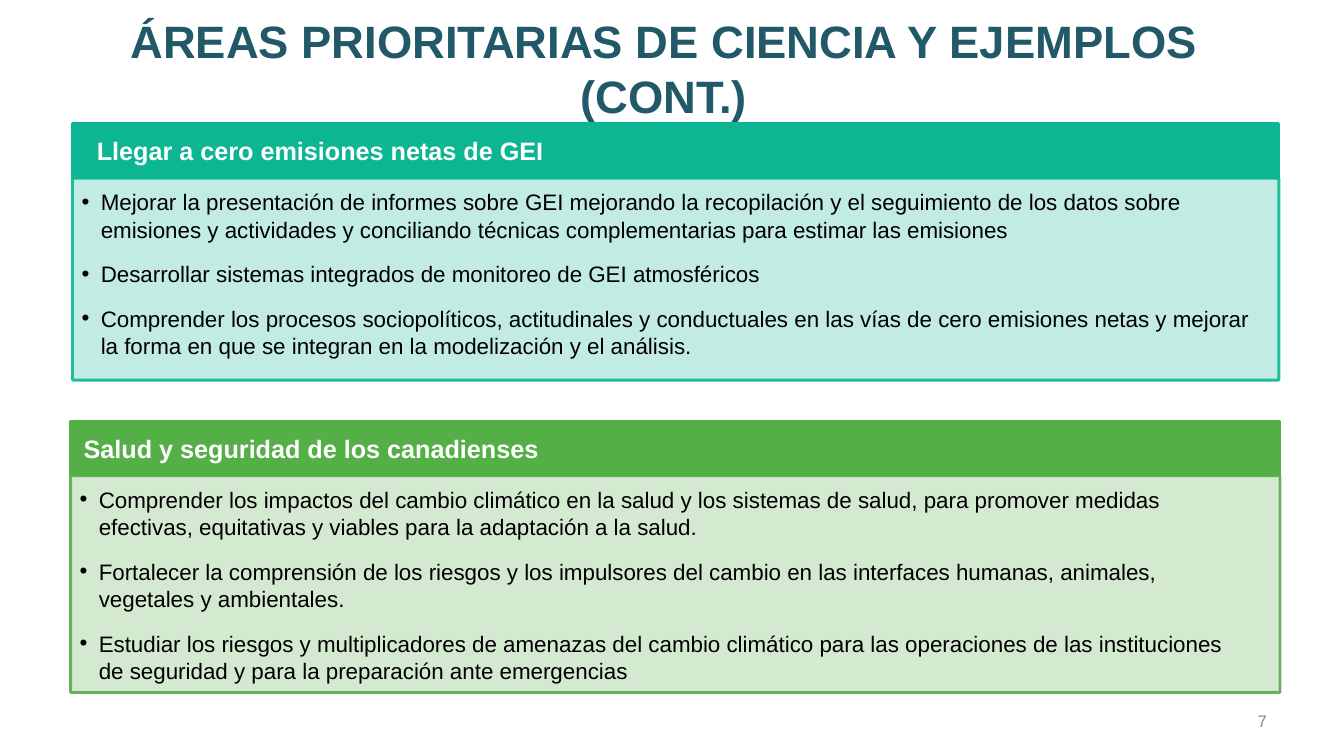
from lxml.etree import SubElement
from pptx import Presentation
from pptx.dml.color import RGBColor
from pptx.enum.shapes import MSO_SHAPE
from pptx.enum.text import MSO_ANCHOR, MSO_AUTO_SIZE, PP_ALIGN
from pptx.oxml.ns import qn
from pptx.util import Cm, Pt

HEADER_HEIGHT = 1.35
BODY_OFFSET = 1.37
INDENT = 0.48

NET_ZERO = [
    "Mejorar la presentación de informes sobre GEI mejorando la recopilación y el seguimiento "
    "de los datos sobre emisiones y actividades y conciliando técnicas complementarias para "
    "estimar las emisiones",
    "Desarrollar sistemas integrados de monitoreo de GEI atmosféricos",
    "Comprender los procesos sociopolíticos, actitudinales y conductuales en las vías de cero "
    "emisiones netas y mejorar la forma en que se integran en la modelización y el análisis.",
]
HEALTH = [
    "Comprender los impactos del cambio climático en la salud y los sistemas de salud, para "
    "promover medidas efectivas, equitativas y viables para la adaptación a la salud.",
    "Fortalecer la comprensión de los riesgos y los impulsores del cambio en las interfaces "
    "humanas, animales, vegetales y ambientales.",
    "Estudiar los riesgos y multiplicadores de amenazas del cambio climático para las "
    "operaciones de las instituciones de seguridad y para la preparación ante emergencias",
]


def rgb(code):
    return RGBColor.from_string(code)


def set_alpha(fill_format_parent, percent):
    """Add transparency to the first solid colour found below an XML element."""
    colour = fill_format_parent.find(qn("a:solidFill")).find(qn("a:srgbClr"))
    SubElement(colour, qn("a:alpha"), val=str(percent * 1000))


def format_text(paragraph, size, colour, bold=False, align=PP_ALIGN.LEFT):
    paragraph.alignment = align
    for run in paragraph.runs:
        run.font.name = "Arial"
        run.font.size = Pt(size)
        run.font.bold = bold
        run.font.color.rgb = rgb(colour)


def set_frame(frame, anchor, left=0.25, top=0.13, right=0.25, bottom=0.13):
    frame.word_wrap = True
    frame.auto_size = MSO_AUTO_SIZE.NONE
    frame.vertical_anchor = anchor
    frame.margin_left, frame.margin_top = Cm(left), Cm(top)
    frame.margin_right, frame.margin_bottom = Cm(right), Cm(bottom)


def add_bullet(paragraph):
    properties = paragraph._p.get_or_add_pPr()
    properties.set("marL", str(Cm(INDENT)))
    properties.set("indent", str(-Cm(INDENT)))
    SubElement(properties, qn("a:buFont"), typeface="Arial")
    SubElement(properties, qn("a:buChar"), char="•")


def add_block(slide, box, colour):
    block = slide.shapes.add_shape(MSO_SHAPE.RECTANGLE, *map(Cm, box))
    block.shadow.inherit = False
    block.fill.solid()
    block.fill.fore_color.rgb = rgb(colour)
    block.line.color.rgb = rgb(colour)
    block.line.width = Pt(2)
    return block


def add_title(slide, box, text):
    title = slide.shapes.title
    title.left, title.top, title.width, title.height = map(Cm, box)
    set_frame(title.text_frame, MSO_ANCHOR.MIDDLE)
    title.text_frame.text = text
    format_text(title.text_frame.paragraphs[0], 32.4, "215968", True, PP_ALIGN.CENTER)


def add_panel(slide, box, colour, heading, points, heading_inset, right_inset):
    left, top, width, height = box

    # Heading band
    band = add_block(slide, (left, top, width, HEADER_HEIGHT), colour)
    set_frame(band.text_frame, MSO_ANCHOR.MIDDLE, left=heading_inset)
    band.text_frame.text = heading
    format_text(band.text_frame.paragraphs[0], 18, "FFFFFF", True)

    # Tinted body with bullets
    body = add_block(slide, (left, top + BODY_OFFSET, width, height - BODY_OFFSET), colour)
    set_alpha(body._element.spPr, 25)
    set_alpha(body._element.spPr.find(qn("a:ln")), 90)
    set_frame(body.text_frame, MSO_ANCHOR.TOP, 0.23, 0.23, right_inset, 0)
    body.text_frame.text = "\n".join(points)
    for paragraph in body.text_frame.paragraphs:
        paragraph.line_spacing = 1.03
        paragraph.space_after = Pt(12)
        add_bullet(paragraph)
        format_text(paragraph, 16, "000000")


def add_page_number(slide, box, number):
    page = slide.shapes.add_textbox(*map(Cm, box)).text_frame
    set_frame(page, MSO_ANCHOR.MIDDLE)
    page.text = number
    format_text(page.paragraphs[0], 12, "8C8C8C", align=PP_ALIGN.RIGHT)


def main():
    deck = Presentation()
    deck.slide_width, deck.slide_height = Cm(33.87), Cm(19.05)
    slide = deck.slides.add_slide(deck.slide_layouts[5])

    add_title(slide, (0.79, 0.3, 31.88, 2.82),
              "ÁREAS PRIORITARIAS DE CIENCIA Y EJEMPLOS (CONT.)")
    add_panel(slide, (1.83, 3.12, 30.4, 6.46), "0DB693",
              "Llegar a cero emisiones netas de GEI", NET_ZERO, 0.61, 0.3)
    add_panel(slide, (1.78, 10.62, 30.48, 6.83), "54AF47",
              "Salud y seguridad de los canadienses", HEALTH, 0.33, 0.8)
    add_page_number(slide, (24.28, 17.65, 7.9, 1.02), "7")

    deck.save("out.pptx")


if __name__ == "__main__":
    main()
